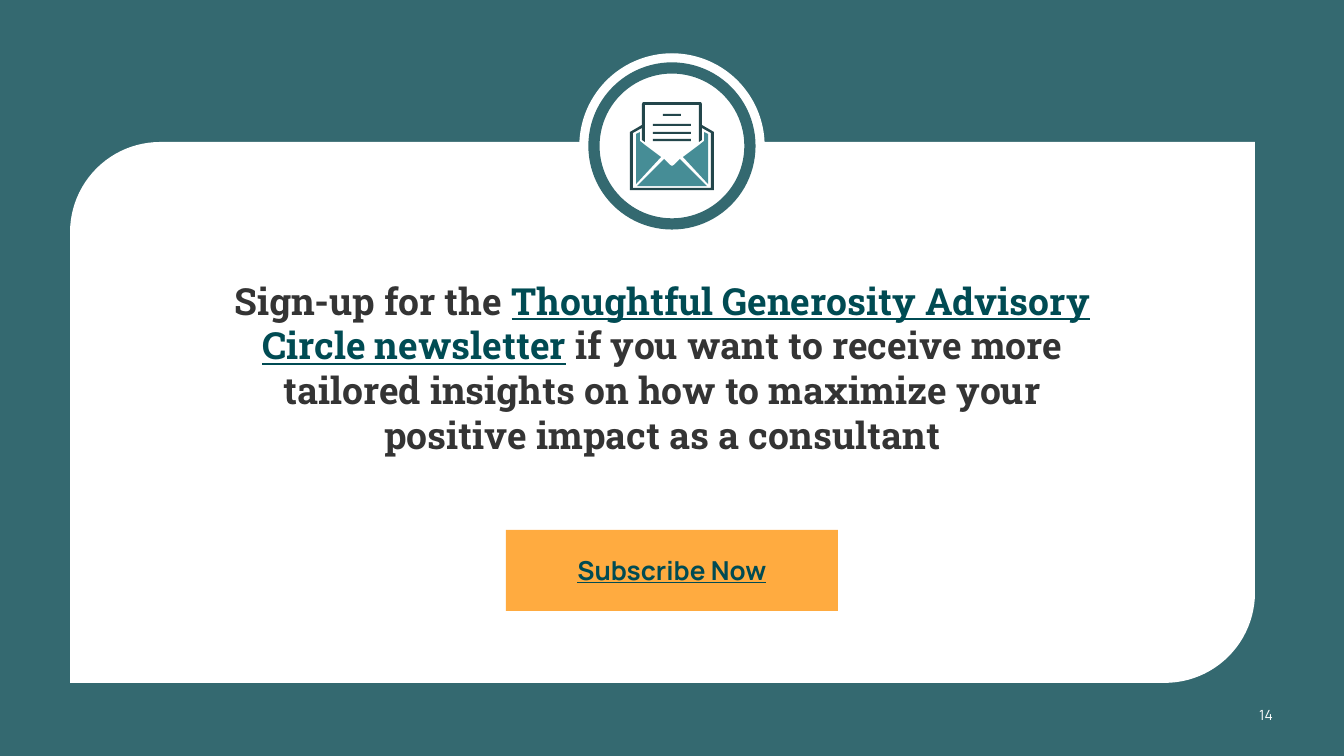
from dataclasses import dataclass

from pptx import Presentation
from pptx.dml.color import RGBColor
from pptx.enum.shapes import MSO_SHAPE as Preset
from pptx.enum.text import MSO_ANCHOR as Anchor, PP_ALIGN as Align
from pptx.util import Emu, Inches, Pt

WIDTH, HEIGHT = 1344, 756
SCALE = Inches(10) / WIDTH
COLORS = {
    "teal": "346970", "white": "FFFFFF", "ink": "343434", "link": "004B53",
    "orange": "FFAB40", "outline": "23464B", "envelope": "468D96",
}
Contour = list[tuple[int, int]]


@dataclass
class Block:
    preset: Preset
    left: int
    top: int
    width: int
    height: int
    fill: str
    line: str = ""
    weight: float = 0


@dataclass
class Span:
    text: str
    size: float
    font: str
    color: str
    bold: bool = True
    underline: bool = False


def px(length: int) -> Emu:
    return Emu(round(length * SCALE))


def rgb(name: str) -> RGBColor:
    return RGBColor.from_string(COLORS[name])


def paint(shape, fill: str, line: str = "", weight: float = 0) -> None:
    shape.shadow.inherit = False
    shape.fill.solid()
    shape.fill.fore_color.rgb = rgb(fill)
    if line:
        shape.line.color.rgb = rgb(line)
        shape.line.width = Pt(weight)
    else:
        shape.line.fill.background()


def draw_block(page, block: Block):
    shape = page.shapes.add_shape(
        block.preset, px(block.left), px(block.top), px(block.width), px(block.height))
    paint(shape, block.fill, block.line, block.weight)
    return shape


def draw_outline(page, contours: list[Contour], fill: str) -> None:
    builder = page.shapes.build_freeform(*contours[0][0], scale=SCALE)
    for number, contour in enumerate(contours):
        if number:
            builder.move_to(*contour[0])
        builder.add_line_segments(contour[1:], close=True)
    paint(builder.convert_to_shape(), fill)


def write(shape, spans: list[Span], margins: tuple[int, int, int, int],
          align: Align = Align.CENTER, anchor: Anchor = Anchor.MIDDLE) -> None:
    frame = shape.text_frame
    frame.word_wrap = True
    frame.vertical_anchor = anchor
    (frame.margin_left, frame.margin_top,
     frame.margin_right, frame.margin_bottom) = map(px, margins)
    para = frame.paragraphs[0]
    para.alignment = align
    for span in spans:
        run = para.add_run()
        run.text = span.text
        run.font.size = Pt(span.size)
        run.font.name = span.font
        run.font.bold = span.bold
        run.font.underline = span.underline
        run.font.color.rgb = rgb(span.color)


def mirror(contour: Contour) -> Contour:
    return [(WIDTH - x, y) for x, y in reversed(contour)]


def bar(left: int, top: int) -> Contour:
    right = WIDTH - left
    return [(left, top), (right, top), (right, top + 2), (left, top + 2)]


def draw_letter_icon(page) -> None:
    outer = [(643, 102), (642, 104), (642, 125), (630, 132), (630, 190)]
    inner = [(645, 105), (645, 142), (642, 140), (642, 128), (633, 133), (633, 188)]
    bars = [bar(653, top) for top in (139, 132, 124)] + [bar(663, 114)]
    draw_outline(page, [outer + mirror(outer), inner + mirror(inner)] + bars, "outline")
    front = [(637, 186), (664, 159), (670, 165)]
    flap = [(640, 132), (640, 141), (645, 145), (661, 157), (636, 184), (636, 134)]
    draw_outline(page, [front + [(672, 166)] + mirror(front), flap, mirror(flap)], "envelope")


def main() -> None:
    """Build the newsletter sign-up slide."""
    deck = Presentation()
    deck.slide_width, deck.slide_height = px(WIDTH), px(HEIGHT)
    page = deck.slides.add_slide(deck.slide_layouts[6])
    page.background.fill.solid()
    page.background.fill.fore_color.rgb = rgb("teal")

    number = page.shapes.add_textbox(px(1231), px(706), px(42), px(17))
    write(number, [Span("14", 7.5, "Manrope", "white", bold=False)],
          (0, 0, 0, 0), Align.RIGHT, Anchor.BOTTOM)

    card = draw_block(page, Block(Preset.ROUND_2_DIAG_RECTANGLE, 70, 142, 1185, 541, "white"))
    card.adjustments[0], card.adjustments[1] = 0.167, 0
    write(card, [
        Span("Sign-up for the ", 20, "Roboto Slab", "ink"),
        Span("Thoughtful Generosity Advisory Circle newsletter",
             20, "Roboto Slab", "link", underline=True),
        Span(" if you want to receive more tailored insights on how to maximize "
             "your positive impact as a consultant", 20, "Roboto Slab", "ink"),
    ], (134, 0, 134, 90))

    draw_block(page, Block(Preset.OVAL, 580, 54, 184, 184, "white", "white", 0.75))
    draw_block(page, Block(Preset.OVAL, 594, 68, 156, 156, "white", "teal", 6))
    draw_letter_icon(page)

    button = draw_block(page, Block(Preset.RECTANGLE, 506, 530, 332, 81, "orange"))
    write(button, [Span("Subscribe Now", 14, "Manrope", "link", underline=True)],
          (13, 13, 13, 13))
    deck.save("out.pptx")


if __name__ == "__main__":
    main()
